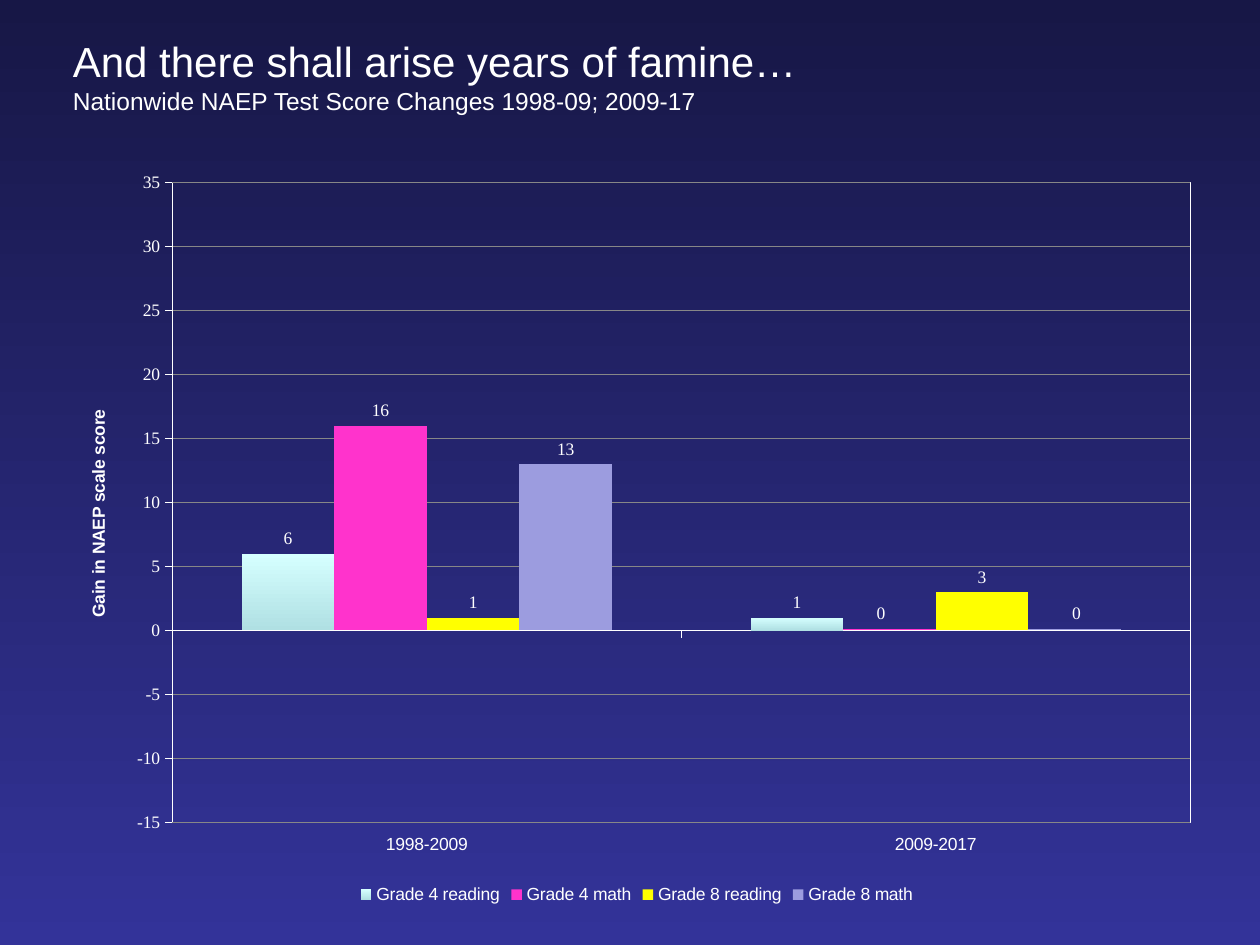
from lxml import etree
from pptx import Presentation
from pptx.chart.data import CategoryChartData
from pptx.dml.color import RGBColor
from pptx.enum.chart import (XL_CHART_TYPE, XL_LABEL_POSITION, XL_LEGEND_POSITION,
                             XL_TICK_LABEL_POSITION, XL_TICK_MARK)
from pptx.enum.text import MSO_AUTO_SIZE, PP_ALIGN
from pptx.oxml import parse_xml
from pptx.oxml.ns import nsdecls, qn
from pptx.util import Inches, Pt

COLUMNS = XL_CHART_TYPE.COLUMN_CLUSTERED
OUTSIDE = XL_TICK_MARK.OUTSIDE
LOW = XL_TICK_LABEL_POSITION.LOW
LABEL_ABOVE = XL_LABEL_POSITION.OUTSIDE_END
BOTTOM = XL_LEGEND_POSITION.BOTTOM
LEFT, CENTER = PP_ALIGN.LEFT, PP_ALIGN.CENTER

SANS, SERIF = "Arial", "Times New Roman"
WHITE, GRID_GREY = "FFFFFF", "878787"
NEAR_ZERO = 0.15  # leaves a sliver of a bar where the score did not change

PERIODS = ["1998-2009", "2009-2017"]
SERIES = [
    ("Grade 4 reading", (6, 1), ("D5FFFF", "B0E0E3")),
    ("Grade 4 math", (16, NEAR_ZERO), ("FF33CC",)),
    ("Grade 8 reading", (1, 3), ("FFFF00",)),
    ("Grade 8 math", (13, NEAR_ZERO), ("9C9CDF",)),
]
# Plot area as shares of the chart's size
PLOT_SHARES = {"x": 0.097, "y": 0.032, "w": 0.883, "h": 0.852}


def color(hex_value):
    return RGBColor.from_string(hex_value)


def set_fill(fill, colors):
    """One colour gives a solid fill, two a gradient from top to bottom."""
    if len(colors) == 1:
        fill.solid()
        fill.fore_color.rgb = color(colors[0])
        return
    fill.gradient()
    fill.gradient_angle = 270
    for stop, hex_value, position in zip(fill.gradient_stops, colors, (0, 1)):
        stop.color.rgb = color(hex_value)
        stop.position = position


def set_font(font, size, name, bold=False):
    font.size, font.name, font.bold = Pt(size), name, bold
    font.color.rgb = color(WHITE)


def set_line(line, hex_value, width=0.75):
    line.color.rgb = color(hex_value)
    line.width = Pt(width)


def add_text(page, place, lines, font_name, align=LEFT, grow=False):
    """Lines are pairs of wording and text size."""
    box = page.shapes.add_textbox(*map(Inches, place))
    frame = box.text_frame
    frame.word_wrap = False
    if grow:
        frame.auto_size = MSO_AUTO_SIZE.SHAPE_TO_FIT_TEXT
    for index, (wording, size) in enumerate(lines):
        para = frame.add_paragraph() if index else frame.paragraphs[0]
        para.text = wording
        para.alignment = align
        set_font(para.font, size, font_name)


def style_axes(chart):
    for axis, font_name in ((chart.category_axis, SANS), (chart.value_axis, SERIF)):
        axis.major_tick_mark = OUTSIDE
        axis.tick_label_position = LOW
        set_font(axis.tick_labels.font, 10, font_name)
        set_line(axis.format.line, WHITE)
    scale = chart.value_axis
    scale.minimum_scale, scale.maximum_scale, scale.major_unit = -15, 35, 5
    set_line(scale.major_gridlines.format.line, GRID_GREY)
    title = scale.axis_title.text_frame
    title.text = "Gain in NAEP scale score"
    set_font(title.paragraphs[0].font, 10, SANS, bold=True)


def style_series(series, values, colors):
    set_fill(series.format.fill, colors)
    series.invert_if_negative = False
    labels = series.data_labels
    labels.show_value = True
    labels.position = LABEL_ABOVE
    set_font(labels.font, 10, SERIF)
    # Near-zero bars get a separate "0" text instead of a data label
    for index, value in enumerate(values):
        if value == NEAR_ZERO:
            hidden = parse_xml(f'<c:dLbl {nsdecls("c")}><c:idx val="{index}"/>'
                               '<c:delete val="1"/></c:dLbl>')
            series.data_labels._element.insert(0, hidden)


def frame_plot(chart):
    """Place the inner plot area and give it a thin white border."""
    area = chart._chartSpace.chart.plotArea
    for old in area.findall(qn("c:layout")):
        area.remove(old)
    layout = etree.Element(qn("c:layout"))
    manual = etree.SubElement(layout, qn("c:manualLayout"))
    settings = {"layoutTarget": "inner", "xMode": "edge", "yMode": "edge", **PLOT_SHARES}
    for tag, value in settings.items():
        etree.SubElement(manual, qn(f"c:{tag}")).set("val", str(value))
    area.insert(0, layout)
    area.append(parse_xml(
        f'<c:spPr {nsdecls("c", "a")}><a:noFill/><a:ln w="{Pt(0.75)}"><a:solidFill>'
        f'<a:srgbClr val="{WHITE}"/></a:solidFill></a:ln></c:spPr>'))


def add_score_chart(page, place):
    data = CategoryChartData()
    data.categories = PERIODS
    for name, values, _ in SERIES:
        data.add_series(name, values)
    chart = page.shapes.add_chart(COLUMNS, *map(Inches, place), data).chart
    chart.has_title = False
    set_font(chart.font, 10, SERIF)
    chart.has_legend = True
    chart.legend.position = BOTTOM
    chart.legend.include_in_layout = False
    set_font(chart.legend.font, 10, SANS)
    plot = chart.plots[0]
    plot.gap_width, plot.overlap, plot.vary_by_categories = 150, 0, False
    style_axes(chart)
    for series, (_, values, colors) in zip(plot.series, SERIES):
        style_series(series, values, colors)
    frame_plot(chart)


def main():
    deck = Presentation()
    deck.slide_width, deck.slide_height = Inches(10), Inches(7.5)
    page = deck.slides.add_slide(deck.slide_layouts[6])
    set_fill(page.background.fill, ("171746", "333399"))

    # Chart and heading share the left margin
    margin = 0.48
    add_score_chart(page, (margin, 1.26, 9.15, 5.96))
    add_text(page, (margin, 0.23, 6.04, 0.74),
             [("And there shall arise years of famine…", 24),
              ("Nationwide NAEP Test Score Changes 1998-09; 2009-17", 14)],
             SANS, grow=True)

    # Labels for the unchanged math scores
    for left in (6.86, 8.41):
        add_text(page, (left, 4.73, 0.25, 0.25), [("0", 10)], SERIF, CENTER)

    deck.save("out.pptx")


if __name__ == "__main__":
    main()
